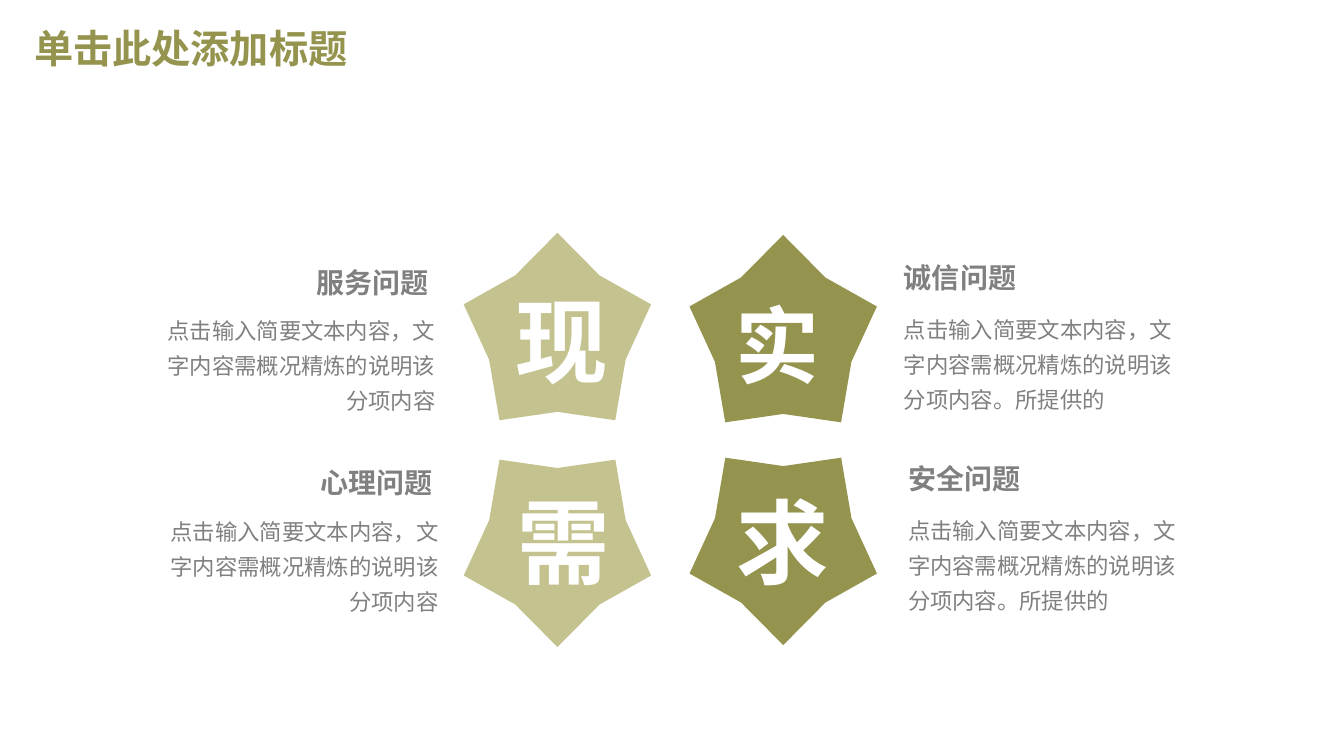
from lxml.etree import SubElement
from pptx import Presentation
from pptx.dml.color import RGBColor
from pptx.enum.shapes import MSO_SHAPE
from pptx.enum.text import MSO_ANCHOR, MSO_AUTO_SIZE, PP_ALIGN
from pptx.oxml.ns import qn
from pptx.util import Pt

CJK_FONT = "Noto Sans CJK SC"
GREY, WHITE, OLIVE, PALE_OLIVE = "808080", "FFFFFF", "95944F", "C4C390"
STAR_SIZE = 133.9
BODY = "点击输入简要文本内容，文字内容需概况精炼的说明该分项内容"
LONG_BODY = BODY + "。所提供的"


def colour(value):
    return RGBColor.from_string(value)


def write(box, text, size, ink, bold=False, align=PP_ALIGN.LEFT, spacing=1.0, latin=CJK_FONT):
    frame = box.text_frame
    frame.word_wrap = True
    para = frame.paragraphs[0]
    para.alignment = align
    para.line_spacing = spacing
    span = para.add_run()
    span.text = text
    for name, value in {"size": Pt(size), "bold": bold, "name": latin}.items():
        setattr(span.font, name, value)
    span.font.color.rgb = colour(ink)
    SubElement(span.font._element, qn("a:ea")).set("typeface", CJK_FONT)


deck = Presentation()
deck.slide_width, deck.slide_height = Pt(960), Pt(540)
page = deck.slides.add_slide(deck.slide_layouts[5])

title = page.shapes.title
for name, value in {"left": 17.3, "top": 14.4, "width": 828, "height": 43.2}.items():
    setattr(title, name, Pt(value))
title.text_frame.vertical_anchor = MSO_ANCHOR.MIDDLE
title.text_frame.auto_size = MSO_AUTO_SIZE.NONE
write(title, "单击此处添加标题", 28, OLIVE, bold=True, spacing=0.9, latin="Montserrat")

LEFT, RIGHT = PP_ALIGN.LEFT, PP_ALIGN.RIGHT
topics = [
    ("诚信问题", (638.6, 182.9), LONG_BODY, (638.6, 216.7), LEFT),
    ("服务问题", (218.9, 185.8), BODY, (105.8, 217.4), RIGHT),
    ("安全问题", (641.5, 326.2), LONG_BODY, (641.5, 360), LEFT),
    ("心理问题", (221.8, 329), BODY, (108, 360.7), RIGHT),
]
for heading, heading_at, body, body_at, align in topics:
    for text, (left, top), (width, height), style in [
        (heading, heading_at, (99.4, 31.7), {"size": 20, "bold": True}),
        (body, body_at, (212.4, 108), {"size": 16, "align": align, "spacing": 1.3}),
    ]:
        box = page.shapes.add_textbox(Pt(left), Pt(top), Pt(width), Pt(height))
        box.text_frame.auto_size = MSO_AUTO_SIZE.SHAPE_TO_FIT_TEXT
        write(box, text, ink=GREY, **style)

stars = [
    ("现", 331.2, 166.3, 0, PALE_OLIVE, (361.4, 199.4, 74.2, 87.1), 66),
    ("需", 331.2, 328.3, 180, PALE_OLIVE, (362.2, 342.7, 73.4, 87.1), 66),
    ("实", 492.5, 167.8, 0, OLIVE, (518.4, 205.9, 82.1, 79.9), 60),
    ("求", 492.5, 326.9, 180, OLIVE, (519.1, 342.7, 82.8, 87.1), 66),
]
for letter, left, top, rotation, fill, letter_at, size in stars:
    star = page.shapes.add_shape(
        MSO_SHAPE.STAR_5_POINT, Pt(left), Pt(top), Pt(STAR_SIZE), Pt(STAR_SIZE)
    )
    star.adjustments[0] = 0.364
    star.rotation = rotation
    star.shadow.inherit = False
    star.fill.solid()
    star.fill.fore_color.rgb = colour(fill)
    star.line.fill.background()
    box = page.shapes.add_textbox(*(Pt(length) for length in letter_at))
    box.text_frame.auto_size = MSO_AUTO_SIZE.SHAPE_TO_FIT_TEXT
    write(box, letter, size, WHITE, bold=True)

deck.save("out.pptx")
